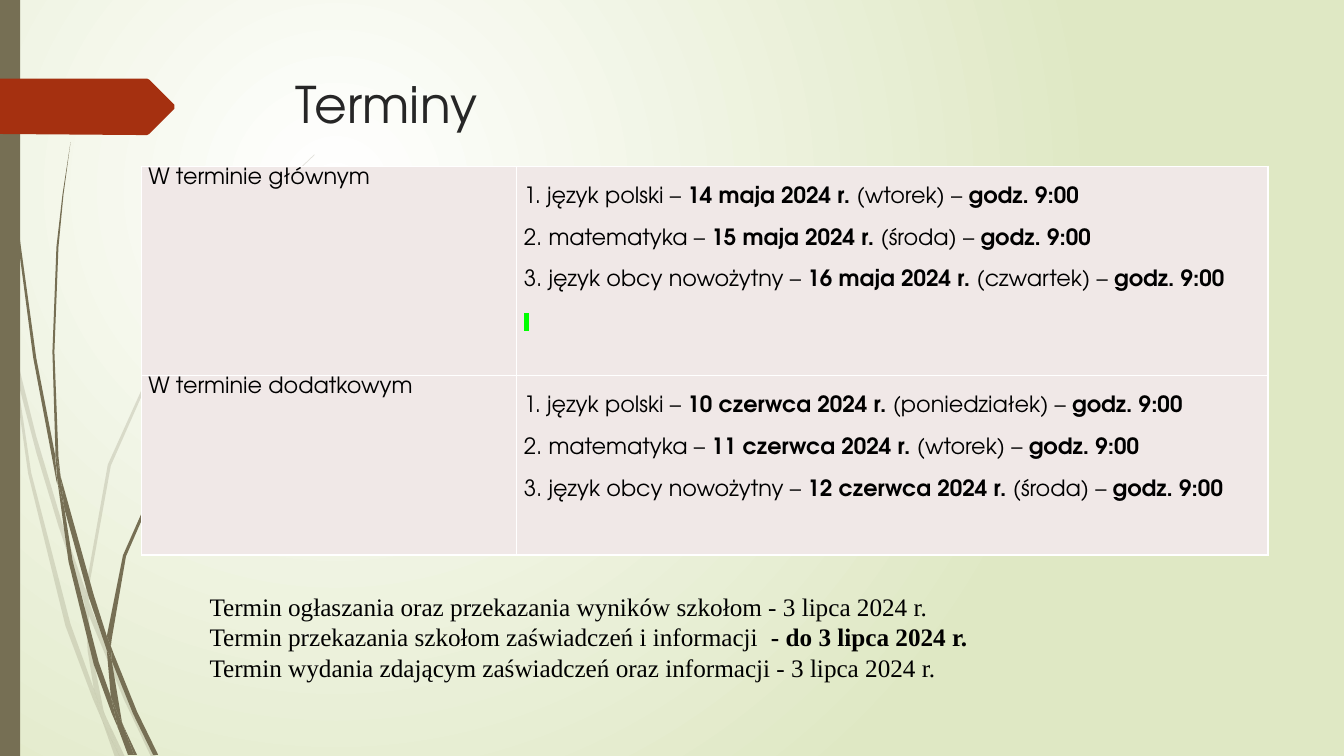
from lxml import etree
from pptx import Presentation
from pptx.dml.color import RGBColor
from pptx.enum.shapes import MSO_SHAPE
from pptx.enum.text import MSO_ANCHOR, PP_ALIGN
from pptx.oxml.ns import qn
from pptx.util import Pt

RECT = MSO_SHAPE.RECTANGLE
TOP = MSO_ANCHOR.TOP
JUSTIFY = PP_ALIGN.JUSTIFY

COLORS = {
    "white": "FFFFFF", "meadow": "DFE8C4", "olive": "766F54", "rust": "A53010",
    "ink": "000000", "title": "262626", "cell": "F0E8E7", "marker": "00FF00",
}
SANS = "TeX Gyre Adventor"
SERIF = "Times New Roman"
TITLE = {"size": Pt(36), "name": SANS}
CELL = {"size": Pt(16), "name": SANS}
MARK = {"size": Pt(14), "name": SANS}
NOTE = {"size": Pt(18), "name": SERIF}
LINE_GAP = 14.8
GRID = Pt(0.72)

PALE_BLADES = [
    [(11, 350), (9, 322), (0, 282), (0, 299), (10, 344)],
    [(58, 522), (84, 599), (85, 586), (62, 520), (36, 433), (14, 345), (17, 376), (36, 449)],
    [(92, 607), (88, 596), (88, 610), (123, 694), (150, 751), (155, 751), (127, 692)],
    [(119, 751), (124, 751), (105, 711)],
    [(93, 683), (70, 619), (31, 469), (17, 376), (11, 350), (28, 470), (65, 621),
     (92, 693), (101, 714), (99, 707)],
    [(84, 599), (87, 646), (93, 683), (96, 692), (105, 711), (103, 706), (91, 646),
     (88, 610), (88, 608)],
    [(88, 584), (110, 462), (160, 349), (229, 245), (268, 198), (290, 175), (312, 154),
     (312, 153), (289, 175), (268, 197), (228, 244), (158, 348), (107, 461), (85, 584),
     (85, 586), (88, 596)],
    [(101, 714), (114, 751), (119, 751)],
    [(88, 608), (88, 610), (88, 596), (85, 586), (84, 599)],
    [(96, 692), (93, 683), (99, 707), (101, 714), (119, 751), (105, 711)],
]
DARK_BLADES = [
    [(7, 110), (17, 233), (33, 355), (56, 477), (57, 481), (55, 457), (55, 453), (36, 355),
     (19, 232), (8, 109), (5, 48), (4, 0), (3, 0), (4, 48)],
    [(88, 592), (106, 645), (106, 633), (106, 631), (93, 590), (60, 472), (64, 505)],
    [(113, 649), (110, 641), (111, 656), (132, 708), (152, 749), (157, 749), (136, 706)],
    [(110, 691), (98, 657), (72, 556), (64, 505), (57, 477), (68, 557), (93, 659),
     (111, 708), (117, 722), (116, 717)],
    [(60, 472), (58, 453), (54, 349), (58, 245), (63, 193), (70, 141), (62, 193), (56, 245),
     (52, 349), (55, 449)],
    [(133, 749), (136, 749), (122, 719)],
    [(57, 477), (64, 505), (60, 472), (55, 449), (55, 453)],
    [(111, 633), (125, 552), (158, 476), (205, 406), (231, 374), (245, 359), (261, 344),
     (260, 344), (245, 358), (231, 373), (204, 405), (156, 474), (122, 551), (106, 631),
     (110, 641)],
    [(117, 722), (127, 749), (131, 749)],
    [(106, 645), (110, 691), (116, 706), (122, 719), (121, 716), (111, 656), (109, 651)],
    [(106, 645), (109, 651), (111, 656), (110, 641), (106, 631), (106, 633)],
    [(116, 706), (110, 691), (116, 717), (117, 722), (130, 749), (133, 749), (122, 719)],
]
TAG = [(173, 108), (148, 133), (146, 134), (136, 134), (0, 133), (0, 78), (136, 78),
       (146, 78), (148, 79), (173, 104)]

SESSIONS = [
    ("W terminie głównym ", 149.6, [
        ("język polski", "14 maja", "wtorek"),
        ("matematyka", "15 maja", "środa"),
        ("język obcy nowożytny", "16 maja", "czwartek")]),
    ("W terminie dodatkowym ", 128, [
        ("język polski", "10 czerwca", "poniedziałek"),
        ("matematyka", "11 czerwca", "wtorek"),
        ("język obcy nowożytny", "12 czerwca", "środa")]),
]
NOTES = [
    [("Termin ogłaszania oraz przekazania wyników szkołom - 3 lipca 2024 r.", False)],
    [("Termin przekazania szkołom zaświadczeń i informacji", False),
     ("  - do 3 lipca 2024 r.", True)],
    [("Termin wydania zdającym zaświadczeń oraz informacji - 3 lipca 2024 r.", False)],
]


def rgb(name):
    return RGBColor.from_string(COLORS[name])


def apply(obj, values):
    for key, value in values.items():
        setattr(obj, key, value)


def paint(sp, color):
    sp.shadow.inherit = False
    sp.fill.solid()
    sp.fill.fore_color.rgb = rgb(color)
    sp.line.fill.background()


def add_background(s):
    fill = s.background.fill
    fill.gradient()
    for stop, color in zip(fill.gradient_stops, ("white", "meadow")):
        stop.color.rgb = rgb(color)
    grad = s.element.find(".//" + qn("a:gradFill"))
    grad.remove(grad.find(qn("a:lin")))
    path = etree.SubElement(grad, qn("a:path"), path="circle")
    etree.SubElement(path, qn("a:fillToRect"), l="50000", t="50000", r="100000", b="100000")


def add_outline(s, points, color, alpha=None):
    builder = s.shapes.build_freeform(*points[0], scale=GRID)
    builder.add_line_segments(points[1:], close=True)
    sp = builder.convert_to_shape()
    paint(sp, color)
    if alpha:
        clr = sp.element.spPr.find(".//" + qn("a:srgbClr"))
        etree.SubElement(clr, qn("a:alpha"), val=str(alpha * 1000))


def add_bar(s, box, color):
    paint(s.shapes.add_shape(RECT, *map(Pt, box)), color)


def write(tf, lines, font, color="ink", **layout):
    for i, runs in enumerate(lines):
        p = tf.paragraphs[0] if i == 0 else tf.add_paragraph()
        apply(p, layout)
        for text, bold in runs:
            r = p.add_run()
            r.text = text
            apply(r.font, {**font, "bold": bold})
            r.font.color.rgb = rgb(color)


def add_text(s, box, lines, font, color="ink", **layout):
    tf = s.shapes.add_textbox(*map(Pt, box)).text_frame
    apply(tf, {"word_wrap": True, "vertical_anchor": TOP})
    write(tf, lines, font, color, **layout)


def add_marker(tf):
    p = tf.add_paragraph()
    apply(p, {"alignment": JUSTIFY, "line_spacing": 1.07})
    r = p.add_run()
    r.text = " "
    apply(r.font, MARK)
    r.font.color.rgb = rgb("ink")
    highlight = etree.Element(qn("a:highlight"))
    etree.SubElement(highlight, qn("a:srgbClr"), val=COLORS["marker"])
    r.font.fill._xPr.find(qn("a:solidFill")).addnext(highlight)


def style_cell(cell, top):
    apply(cell, {"margin_left": Pt(5.2), "margin_right": Pt(5.2), "margin_top": Pt(top),
                 "margin_bottom": 0, "vertical_anchor": TOP})
    tcPr = cell._tc.get_or_add_tcPr()
    for side in ("lnL", "lnR", "lnT", "lnB"):
        ln = etree.SubElement(tcPr, qn("a:" + side), w=str(Pt(1)))
        fill = etree.SubElement(ln, qn("a:solidFill"))
        etree.SubElement(fill, qn("a:srgbClr"), val=COLORS["white"])
    cell.fill.solid()
    cell.fill.fore_color.rgb = rgb("cell")


def add_schedule(s):
    height = sum(h for _, h, _ in SESSIONS)
    table = s.shapes.add_table(len(SESSIONS), 2, Pt(100.8), Pt(118.8), Pt(805), Pt(height)).table
    for column, width in zip(table.columns, (268.2, 536.8)):
        column.width = Pt(width)
    for row, (label, height, exams) in zip(table.rows, SESSIONS):
        row.height = Pt(height)
        name, dates = row.cells
        style_cell(name, 0)
        style_cell(dates, LINE_GAP)
        write(name.text_frame, [[(label, False)]], CELL, alignment=JUSTIFY, line_spacing=1.07)
        lines = [[(f"{n}. {exam} – ", False), (f"{day} 2024 r. ", True),
                  (f"({weekday}) – ", False), ("godz. 9:00", True)]
                 for n, (exam, day, weekday) in enumerate(exams, 1)]
        write(dates.text_frame, lines, CELL, space_after=Pt(LINE_GAP))
    add_marker(table.cell(0, 1).text_frame)


def main():
    prs = Presentation()
    apply(prs, {"slide_width": Pt(960), "slide_height": Pt(540)})
    s = prs.slides.add_slide(prs.slide_layouts[6])
    add_background(s)
    for blade in PALE_BLADES:
        add_outline(s, blade, "olive", alpha=20)
    for blade in DARK_BLADES:
        add_outline(s, blade, "olive")
    add_bar(s, (0, 0, 14.4, 540), "olive")
    add_outline(s, TAG, "rust")
    add_text(s, (204.2, 49, 702, 100.8), [[("Terminy", False)]], TITLE, "title")
    add_schedule(s)
    add_text(s, (142.6, 419, 703.4, 72.7), NOTES, NOTE, alignment=JUSTIFY)
    prs.save("out.pptx")


if __name__ == "__main__":
    main()
